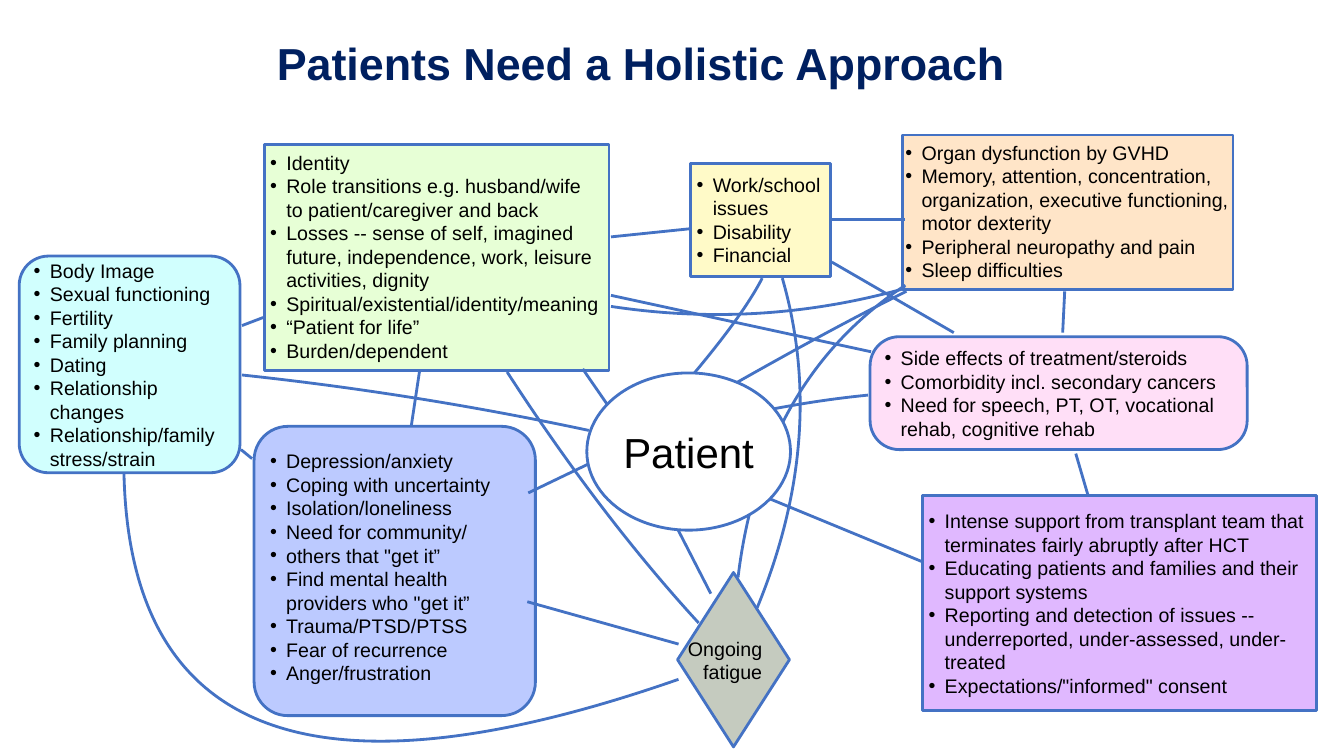
from lxml.etree import SubElement
from pptx import Presentation
from pptx.dml.color import RGBColor
from pptx.enum.shapes import MSO_CONNECTOR, MSO_SHAPE
from pptx.enum.text import MSO_ANCHOR, PP_ALIGN
from pptx.oxml.ns import qn
from pptx.util import Inches, Pt

# Grid of square cells: 13.33 columns by 7.5 rows
CELL = Inches(1)
COLUMNS, ROWS = 13.33, 7.5
INDENT = 0.16
CURVE_STEPS = 32

BLACK = RGBColor(0x00, 0x00, 0x00)
WHITE = RGBColor(0xFF, 0xFF, 0xFF)
NAVY = RGBColor(0x00, 0x20, 0x60)
BLUE = RGBColor(0x44, 0x72, 0xC4)
YELLOW = RGBColor(0xFF, 0xFA, 0xC8)
CYAN = RGBColor(0xD1, 0xFF, 0xFE)
GREEN = RGBColor(0xE7, 0xFF, 0xD6)
PERIWINKLE = RGBColor(0xBC, 0xCA, 0xFF)
GRAY = RGBColor(0xC5, 0xCB, 0xBF)
ORANGE = RGBColor(0xFF, 0xE5, 0xC8)
PINK = RGBColor(0xFF, 0xDF, 0xF7)
PURPLE = RGBColor(0xE0, 0xB8, 0xFF)


def cells(*counts):
    return [round(count * CELL) for count in counts]


def write_text(shape, lines, size=14, color=BLACK, bold=False, margin=0.05, lift=0,
               align=PP_ALIGN.LEFT, bullets=False, spacing=1.0):
    frame = shape.text_frame
    frame.word_wrap = True
    frame.vertical_anchor = MSO_ANCHOR.MIDDLE
    frame.margin_left = frame.margin_right = round(margin * CELL)
    frame.margin_top = 0
    frame.margin_bottom = round(2 * lift * CELL)
    for index, line in enumerate(lines):
        paragraph = frame.paragraphs[0] if index == 0 else frame.add_paragraph()
        paragraph.alignment = align
        paragraph.line_spacing = spacing
        if bullets:
            properties = paragraph._p.get_or_add_pPr()
            properties.set("marL", str(round(INDENT * CELL)))
            properties.set("indent", str(round(-INDENT * CELL)))
            SubElement(properties, qn("a:buFont"), typeface="Arial")
            SubElement(properties, qn("a:buChar"), char="•")
        run = paragraph.add_run()
        run.text = line
        run.font.name = "Arial"
        run.font.size = Pt(size)
        run.font.bold = bold
        run.font.color.rgb = color


presentation = Presentation()
presentation.slide_width, presentation.slide_height = cells(COLUMNS, ROWS)
slide = presentation.slides.add_slide(presentation.slide_layouts[5])
shapes = slide.shapes
outlined = []

# Title
title = shapes.title
title.left, title.top, title.width, title.height = cells(1.93, 0.07, 8.86, 1.16)
write_text(title, ["Patients Need a Holistic Approach"], size=32, color=NAVY,
           bold=True, margin=0, align=PP_ALIGN.CENTER, spacing=0.9)

# Concern cards: place, fill, corner rounding, side margin, text lift, bullets
cards = [
    ((6.85, 1.62, 1.39, 1.12), YELLOW, 0, 0.06, 0,
     ["Work/school issues", "Disability", "Financial"]),
    ((0.19, 2.54, 2.19, 2.15), CYAN, 0.135, 0.06, 0,
     ["Body Image", "Sexual functioning", "Fertility", "Family planning", "Dating",
      "Relationship changes", "Relationship/family stress/strain"]),
    ((2.62, 1.43, 3.42, 2.25), GREEN, 0, 0.06, 0.01,
     ["Identity",
      "Role transitions e.g. husband/wife to patient/caregiver and back",
      "Losses -- sense of self, imagined future, independence, work, leisure "
      "activities, dignity",
      "Spiritual/existential/identity/meaning", "“Patient for life”",
      "Burden/dependent"]),
    ((2.52, 4.23, 2.79, 2.87), PERIWINKLE, 0.12, 0.06, 0.04,
     ["Depression/anxiety", "Coping with uncertainty", "Isolation/loneliness",
      "Need for community/", "others that \"get it”",
      "Find mental health providers who \"get it”", "Trauma/PTSD/PTSS",
      "Fear of recurrence", "Anger/frustration"]),
    ((8.95, 1.34, 3.28, 1.53), ORANGE, 0, 0.03, 0.01,
     ["Organ dysfunction by GVHD",
      "Memory, attention, concentration, organization, executive functioning, "
      "motor dexterity",
      "Peripheral neuropathy and pain", "Sleep difficulties"]),
    ((8.63, 3.34, 3.74, 1.12), PINK, 0.257, 0.06, 0,
     ["Side effects of treatment/steroids", "Comorbidity incl. secondary cancers",
      "Need for speech, PT, OT, vocational rehab, cognitive rehab"]),
    ((9.15, 4.92, 3.91, 2.13), PURPLE, 0, 0.06, 0,
     ["Intense support from transplant team that terminates fairly abruptly after HCT",
      "Educating patients and families and their support systems",
      "Reporting and detection of issues -- underreported, under-assessed, "
      "under-treated",
      "Expectations/\"informed\" consent"]),
]
for place, fill, rounding, margin, lift, concerns in cards:
    kind = MSO_SHAPE.ROUNDED_RECTANGLE if rounding else MSO_SHAPE.RECTANGLE
    card = shapes.add_shape(kind, *cells(*place))
    if rounding:
        card.adjustments[0] = rounding
    card.fill.solid()
    card.fill.fore_color.rgb = fill
    write_text(card, concerns, margin=margin, lift=lift, bullets=True)
    outlined.append(card)

# Fatigue diamond, with its label wider than the diamond's own text area
diamond = shapes.add_shape(MSO_SHAPE.DIAMOND, *cells(6.72, 5.68, 1.11, 1.73))
diamond.fill.solid()
diamond.fill.fore_color.rgb = GRAY
outlined.append(diamond)
fatigue_label = shapes.add_textbox(*cells(6.73, 6.28, 0.88, 0.54))
write_text(fatigue_label, ["Ongoing fatigue"], align=PP_ALIGN.RIGHT)

# Straight links: start and end
patient_center = (6.28, 4.39)
straight_links = [
    (5.24, 4.89, *patient_center), (4.08, 4.22, 4.16, 3.69),
    (2.4, 3.23, 2.61, 3.15), (8.25, 2.18, 8.98, 2.18),
    (6.06, 2.35, 6.84, 2.27), (*patient_center, 9.14, 5.57),
    (10.79, 4.91, 10.67, 4.5), (7.05, 5.89, *patient_center),
    (5.23, 5.97, 6.73, 6.39), (2.39, 4.46, 2.5, 4.55),
    (10.54, 3.3, 10.56, 2.89), (9.46, 3.3, 8.25, 2.6),
    (6.06, 2.93, 8.64, 3.49),
]
for ends in straight_links:
    link = shapes.add_connector(MSO_CONNECTOR.STRAIGHT, *cells(*ends))
    SubElement(link._element.spPr, qn("a:effectLst"))
    outlined.append(link)

# Curved links: start, two control points, end
curved_links = [
    (patient_center, (6.94, 3.67), (7.37, 3.13), (7.56, 2.76)),
    (patient_center, (6.1, 4.12), (5.93, 3.88), (5.78, 3.66)),
    (patient_center, (7.35, 3.76), (8.25, 3.26), (8.99, 2.89)),
    (patient_center, (7.12, 4.15), (7.9, 3.99), (8.61, 3.92)),
    ((1.23, 4.7), (1.29, 7.32), (3.12, 8), (6.73, 6.74)),
    ((7.51, 6.03), (7.98, 4.89), (8.06, 3.8), (7.76, 2.76)),
    ((7.32, 5.73), (7.48, 4.41), (8.04, 3.45), (8.98, 2.83)),
    ((2.4, 3.72), (3.52, 3.84), (4.67, 4.02), (5.84, 4.27)),
    ((6.06, 3.04), (7.05, 3.19), (8.02, 3.13), (8.98, 2.86)),
    ((5.03, 3.69), (5.64, 4.63), (6.27, 5.46), (6.93, 6.18)),
]
for controls in curved_links:
    # Points along the curve give the exact extent of the shape
    points = []
    for step in range(CURVE_STEPS + 1):
        t = step / CURVE_STEPS
        weights = ((1 - t) ** 3, 3 * t * (1 - t) ** 2, 3 * t ** 2 * (1 - t), t ** 3)
        points.append(cells(*(sum(weight * value for weight, value in zip(weights, axis))
                              for axis in zip(*controls))))
    builder = shapes.build_freeform(*points[0])
    builder.add_line_segments(points[1:], close=False)
    curve = builder.convert_to_shape()
    # One cubic segment takes the place of the short lines
    outline = next(curve._element.iter(qn("a:pathLst")))[0]
    for segment in outline.findall(qn("a:lnTo")):
        outline.remove(segment)
    cubic = SubElement(outline, qn("a:cubicBezTo"))
    for control in controls[1:]:
        x, y = cells(*control)
        SubElement(cubic, qn("a:pt"), x=str(x - curve.left), y=str(y - curve.top))
    curve.fill.background()
    outlined.append(curve)

# Patient in the middle, over the link ends
patient = shapes.add_shape(MSO_SHAPE.OVAL, *cells(5.82, 3.7, 2.02, 1.56))
patient.fill.solid()
patient.fill.fore_color.rgb = WHITE
write_text(patient, ["Patient"], size=30, margin=0, align=PP_ALIGN.CENTER)
outlined.append(patient)

# Shared outline
for shape in outlined:
    shape.line.color.rgb = BLUE
    shape.line.width = Pt(2)
    if hasattr(shape, "shadow"):
        shape.shadow.inherit = False

presentation.save("out.pptx")
